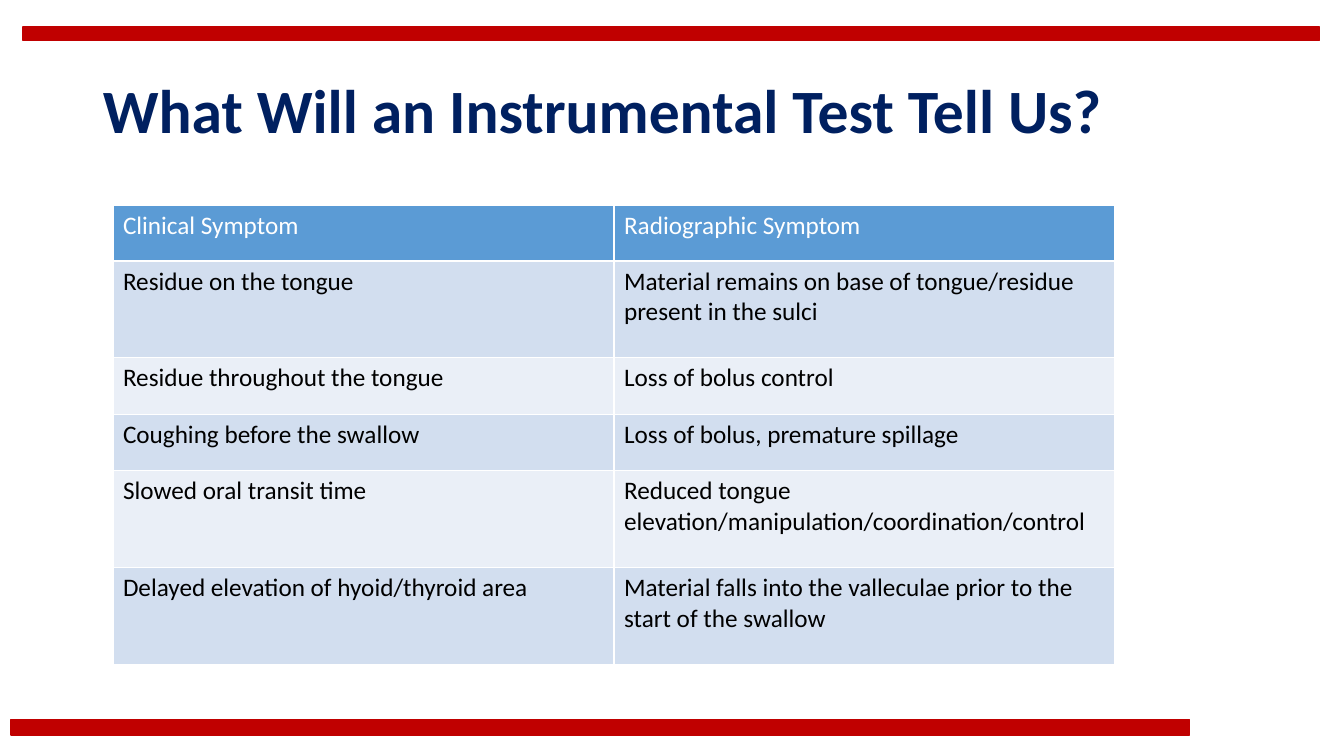
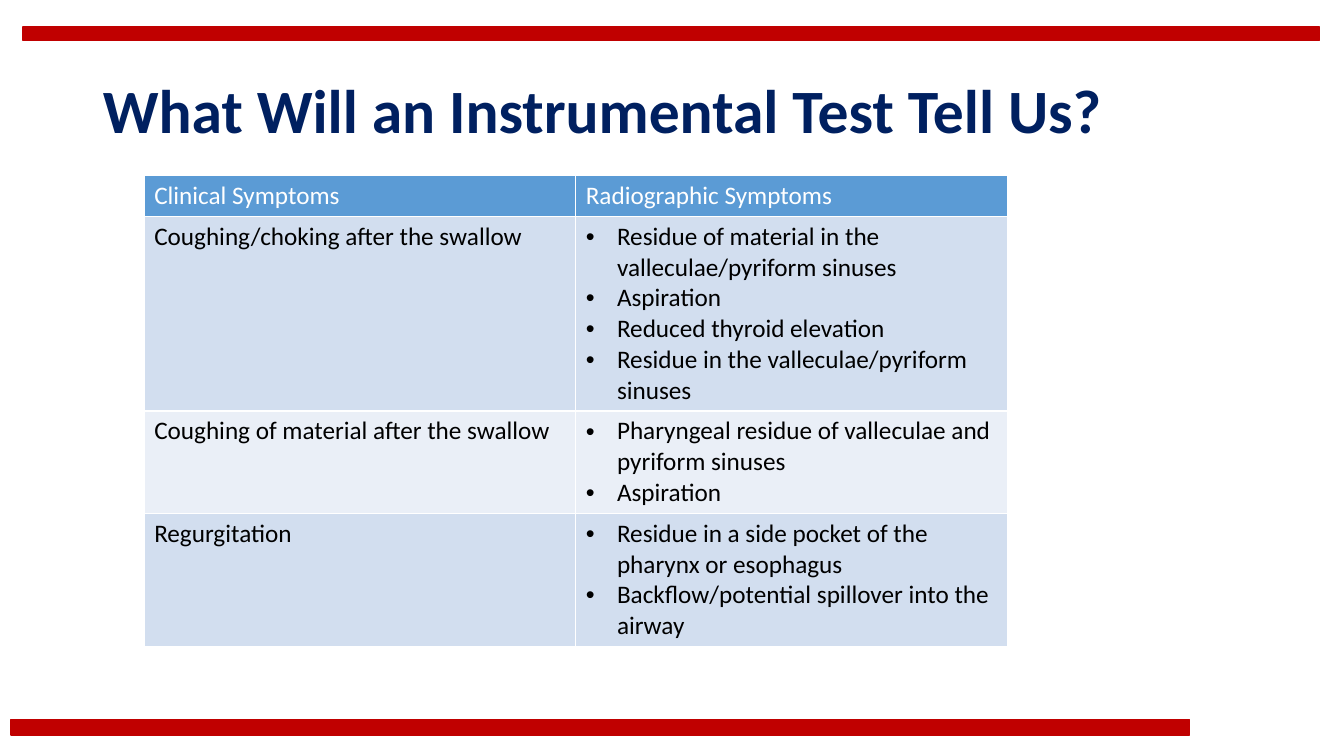
from lxml import etree
from pptx import Presentation
from pptx.dml.color import RGBColor
from pptx.enum.shapes import MSO_SHAPE
from pptx.enum.text import MSO_ANCHOR, MSO_AUTO_SIZE, PP_ALIGN
from pptx.oxml.ns import qn
from pptx.util import Inches, Pt

RECTANGLE = MSO_SHAPE.RECTANGLE
MIDDLE = MSO_ANCHOR.MIDDLE
NO_AUTOFIT = MSO_AUTO_SIZE.NONE
LEFT = PP_ALIGN.LEFT
TITLE_ONLY = 5

COLOURS = {
    "band": "C00000",
    "title": "002060",
    "header": "5B9BD5",
    "odd_row": "D2DEEF",
    "even_row": "EAEFF7",
    "border": "FFFFFF",
    "header_text": "FFFFFF",
    "body_text": "000000",
}
FONT = "Calibri"
TITLE_FORMAT = {"name": FONT, "size": Pt(44), "bold": True}
CELL_FORMAT = {"name": FONT, "size": Pt(18), "bold": False}

TITLE_BOX = (0.92, 0.4, 11.5, 1.45)
BAND_BOXES = [(0.11, 7.14, 11.69, 0.15), (0.23, 0.27, 12.86, 0.13)]
BULLET_INDENT = Inches(0.31)

TITLE = "What Will an Instrumental Test Tell Us?"
# Each table: left, top, width; row heights; rows of cells (a list is bulleted).
TABLES = [
    {
        "box": (1.12, 2.04, 9.94),
        "heights": [0.55, 0.96, 0.56, 0.56, 0.96, 0.96],
        "rows": [
            ("Clinical Symptom", "Radiographic Symptom"),
            ("Residue on the tongue",
             "Material remains on base of tongue/residue present in the sulci"),
            ("Residue throughout the tongue", "Loss of bolus control"),
            ("Coughing before the swallow", "Loss of bolus, premature spillage"),
            ("Slowed oral transit time",
             "Reduced tongue elevation/manipulation/coordination/control"),
            ("Delayed elevation of hyoid/thyroid area",
             "Material falls into the valleculae prior to the start of the swallow"),
        ],
    },
    {
        "box": (1.43, 1.74, 8.56),
        "heights": [0.4, 1.9, 1, 1.3],
        "rows": [
            ("Clinical Symptoms", "Radiographic Symptoms"),
            ("Coughing/choking after the swallow",
             ["Residue of material in the valleculae/pyriform sinuses",
              "Aspiration",
              "Reduced thyroid elevation",
              "Residue in the valleculae/pyriform sinuses"]),
            ("Coughing of material after the swallow",
             ["Pharyngeal residue of valleculae and pyriform sinuses",
              "Aspiration"]),
            ("Regurgitation",
             ["Residue in a side pocket of the pharynx or esophagus",
              "Backflow/potential spillover into the airway"]),
        ],
    },
]


def colour(name):
    return RGBColor.from_string(COLOURS[name])


def format_font(font, values, colour_name):
    for attribute, value in values.items():
        setattr(font, attribute, value)
    font.color.rgb = colour(colour_name)


def add_band(slide, box):
    band = slide.shapes.add_shape(RECTANGLE, *map(Inches, box))
    band.shadow.inherit = False
    band.fill.solid()
    band.fill.fore_color.rgb = colour("band")
    band.line.color.rgb = colour("band")
    band.line.width = Pt(1)


def set_title(slide, text, box):
    title = slide.shapes.title
    title.left, title.top, title.width, title.height = map(Inches, box)
    frame = title.text_frame
    frame.text = text
    frame.word_wrap = True
    frame.auto_size = NO_AUTOFIT
    frame.vertical_anchor = MIDDLE
    para = frame.paragraphs[0]
    para.alignment = LEFT
    para.line_spacing = 0.9
    format_font(para.font, TITLE_FORMAT, "title")


def add_bullet(para):
    properties = para._p.get_or_add_pPr()
    properties.set("marL", str(BULLET_INDENT))
    properties.set("indent", str(-BULLET_INDENT))
    etree.SubElement(properties, qn("a:buFont"), typeface="Arial")
    etree.SubElement(properties, qn("a:buChar"), char="•")


def add_borders(cell):
    properties = cell._tc.get_or_add_tcPr()
    for side in ("lnL", "lnR", "lnT", "lnB"):
        line = etree.SubElement(properties, qn(f"a:{side}"), w=str(Pt(1)))
        fill = etree.SubElement(line, qn("a:solidFill"))
        etree.SubElement(fill, qn("a:srgbClr"), val=COLOURS["border"])


def fill_cell(cell, content, fill_name, text_name):
    add_borders(cell)
    cell.fill.solid()
    cell.fill.fore_color.rgb = colour(fill_name)
    bulleted = isinstance(content, list)
    cell.text = "\n".join(content) if bulleted else content
    for para in cell.text_frame.paragraphs:
        if bulleted:
            add_bullet(para)
        for span in para.runs:
            format_font(span.font, CELL_FORMAT, text_name)


def add_symptom_table(slide, box, heights, rows):
    left, top, width = box
    columns = len(rows[0])
    table = slide.shapes.add_table(
        len(rows), columns, Inches(left), Inches(top),
        Inches(width), Inches(sum(heights))).table
    for column in table.columns:
        column.width = Inches(width / columns)
    for index, (height, contents) in enumerate(zip(heights, rows)):
        table.rows[index].height = Inches(height)
        if index == 0:
            fill_name, text_name = "header", "header_text"
        else:
            fill_name = "odd_row" if index % 2 else "even_row"
            text_name = "body_text"
        for cell, content in zip(table.rows[index].cells, contents):
            fill_cell(cell, content, fill_name, text_name)


def add_table_slide(deck, title, table):
    slide = deck.slides.add_slide(deck.slide_layouts[TITLE_ONLY])
    for box in BAND_BOXES:
        add_band(slide, box)
    set_title(slide, title, TITLE_BOX)
    add_symptom_table(slide, **table)


def main():
    deck = Presentation()
    deck.slide_width, deck.slide_height = Inches(13.33), Inches(7.5)
    for table in TABLES:
        add_table_slide(deck, TITLE, table)
    deck.save("out.pptx")


if __name__ == "__main__":
    main()
